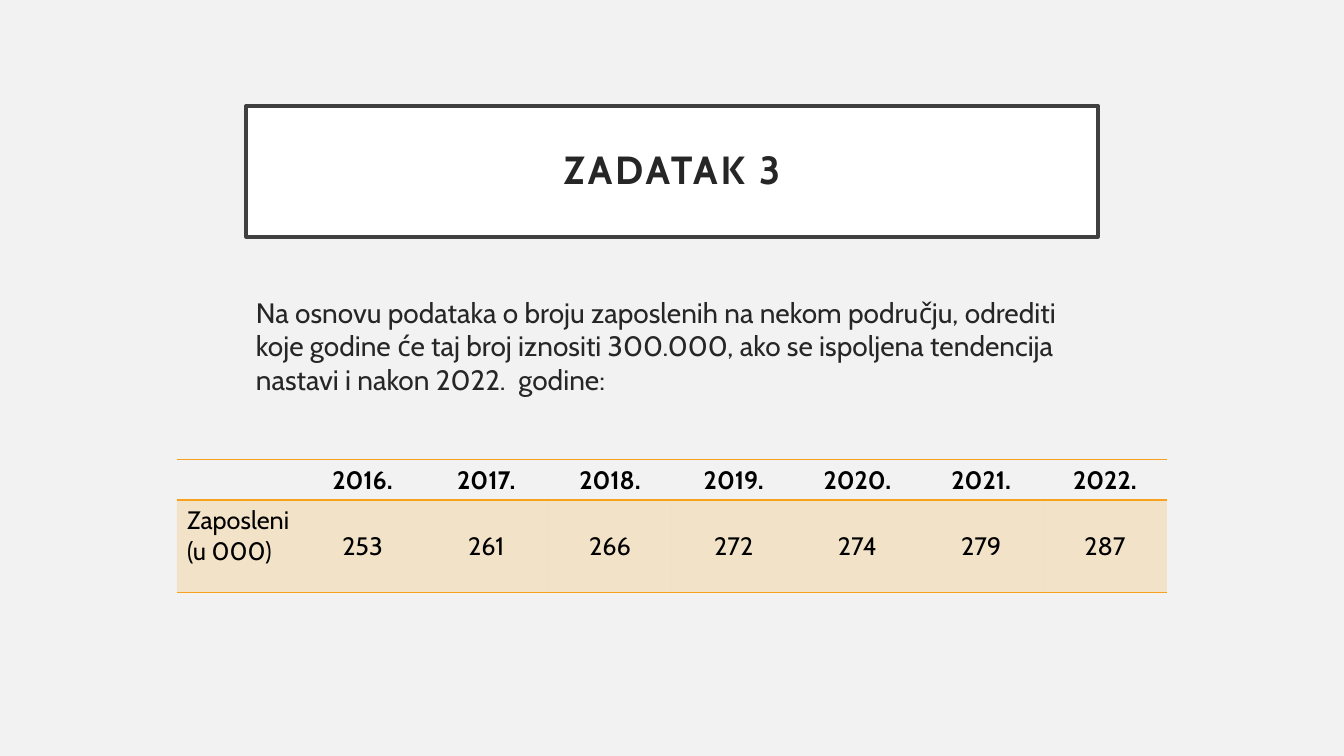
from lxml import etree
from pptx import Presentation
from pptx import util as u
from pptx.dml.color import RGBColor
from pptx.enum import shapes, text
from pptx.oxml import ns

TITLE = "ZADATAK 3"
TASK = ("Na osnovu podataka o broju zaposlenih na nekom području, odrediti "
        "koje godine će taj broj iznositi 300.000, ako se ispoljena tendencija "
        "nastavi i nakon 2022.  godine:")
ROWS = [
    ["", *(f"{year}." for year in range(2016, 2023))],
    ["Zaposleni (u 000)", "253", "261", "266", "272", "274", "279", "287"],
]
HEIGHTS = [0.38, 0.92]
WIDE, HIGH = 13.33, 7.5
BOX, GRID = 8.45, 9.82
FONT = "Cabin"
PAPER = RGBColor(0xF2, 0xF2, 0xF2)
WHITE = RGBColor(0xFF, 0xFF, 0xFF)
FRAME = RGBColor(0x40, 0x40, 0x40)
INK = RGBColor(0x26, 0x26, 0x26)
BLACK = RGBColor(0, 0, 0)
AMBER = RGBColor(0xF6, 0xA2, 0x1D)


def style(para, size, color, bold=False):
    font = para.font
    font.name, font.size, font.bold = FONT, u.Pt(size), bold
    font.color.rgb = color


def border(cell, sides):
    props = cell._tc.get_or_add_tcPr()
    for spot, side in enumerate("LRTB"):
        line = etree.Element(ns.qn(f"a:ln{side}"), w=str(u.Pt(1)))
        if side in sides:
            fill = etree.SubElement(line, ns.qn("a:solidFill"))
            etree.SubElement(fill, ns.qn("a:srgbClr"), val=str(AMBER))
        else:
            line.set("w", "0")
            etree.SubElement(line, ns.qn("a:noFill"))
        props.insert(spot, line)


def tint(cell):
    cell.fill.solid()
    cell.fill.fore_color.rgb = AMBER
    color = cell._tc.tcPr.find(".//" + ns.qn("a:srgbClr"))
    etree.SubElement(color, ns.qn("a:alpha"), val="20000")


def add_title(slide):
    box = slide.shapes.add_shape(
        shapes.MSO_SHAPE.RECTANGLE, u.Inches((WIDE - BOX) / 2),
        u.Inches(HIGH * 0.14), u.Inches(BOX), u.Inches(1.3))
    box.shadow.inherit = False
    box.fill.solid()
    box.fill.fore_color.rgb = WHITE
    box.line.color.rgb = FRAME
    box.line.width = u.Pt(2.5)
    frame = box.text_frame
    frame.word_wrap = True
    frame.vertical_anchor = text.MSO_ANCHOR.MIDDLE
    para = frame.paragraphs[0]
    para.alignment = text.PP_ALIGN.CENTER
    para.line_spacing = 0.9
    run = para.add_run()
    run.text = TITLE
    style(run, 28, INK, True)
    run.font._element.set("spc", "200")


def add_task(slide):
    box = slide.shapes.add_textbox(
        u.Inches((WIDE - BOX) / 2), u.Inches(2.88), u.Inches(BOX), u.Inches(3.39))
    box.text_frame.word_wrap = True
    para = box.text_frame.paragraphs[0]
    para.text = TASK
    para.space_before = u.Pt(10)
    style(para, 20, INK)


def add_data(slide):
    table = slide.shapes.add_table(
        len(ROWS), len(ROWS[0]), u.Inches((WIDE - GRID) / 2), u.Inches(4.56),
        u.Inches(GRID), u.Inches(sum(HEIGHTS))).table
    table.horz_banding = False
    for col in table.columns:
        col.width = u.Inches(GRID / len(ROWS[0]))
    for r, row in enumerate(ROWS):
        table.rows[r].height = u.Inches(HEIGHTS[r])
        for c, word in enumerate(row):
            cell = table.cell(r, c)
            cell.text = word
            para = cell.text_frame.paragraphs[0]
            style(para, 18, BLACK, r == 0)
            if c:
                para.alignment = text.PP_ALIGN.CENTER
                cell.vertical_anchor = text.MSO_ANCHOR.MIDDLE
            if r:
                tint(cell)
            else:
                cell.fill.background()
            border(cell, "TB")


def main():
    deck = Presentation()
    deck.slide_width, deck.slide_height = u.Inches(WIDE), u.Inches(HIGH)
    slide = deck.slides.add_slide(deck.slide_layouts[6])
    slide.background.fill.solid()
    slide.background.fill.fore_color.rgb = PAPER
    add_title(slide)
    add_task(slide)
    add_data(slide)
    deck.save("out.pptx")


if __name__ == "__main__":
    main()
